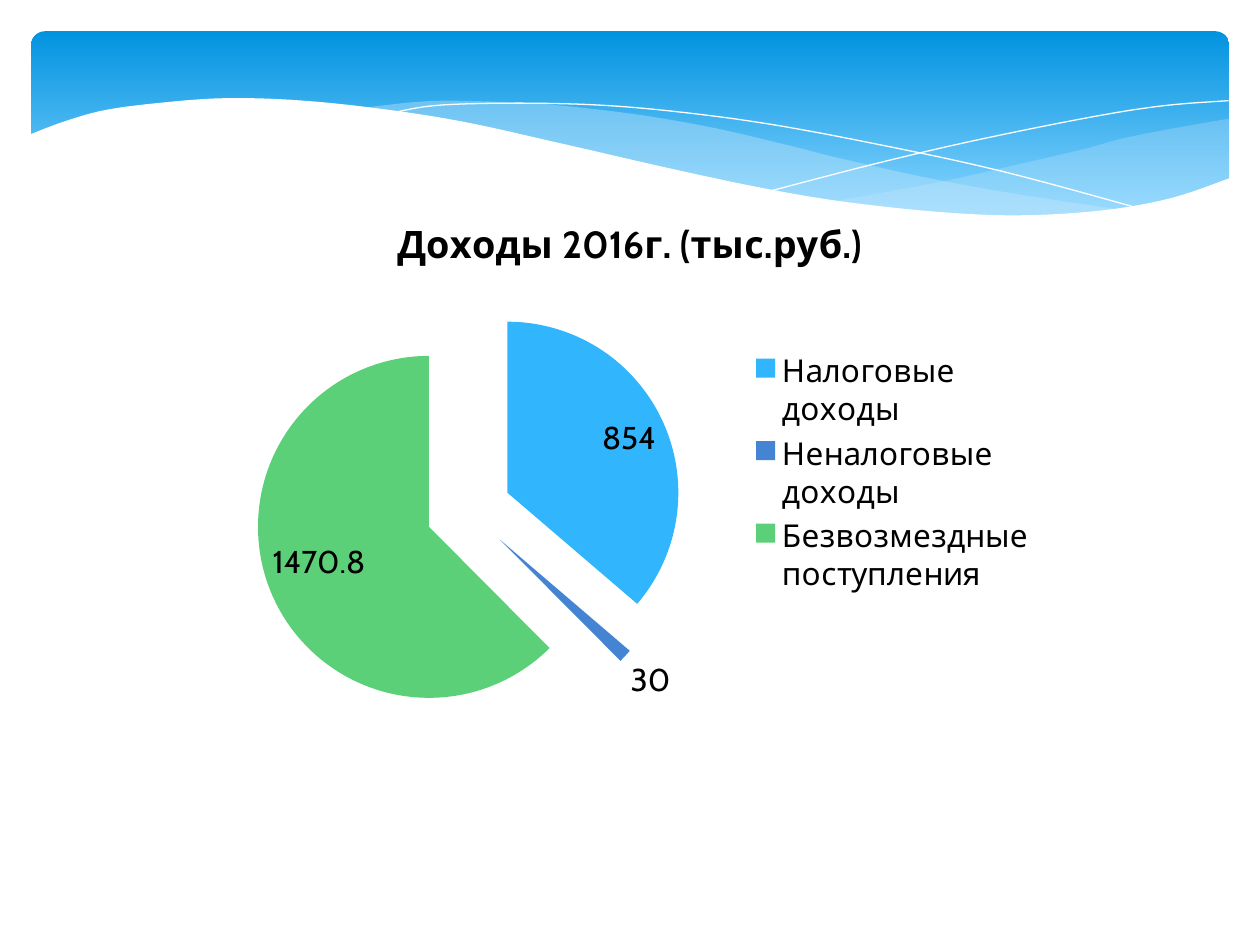
from dataclasses import dataclass
from typing import NamedTuple, Optional

from lxml.etree import Element
from pptx import Presentation
from pptx.chart.data import CategoryChartData
from pptx.dml.color import RGBColor as RGB
from pptx.enum.chart import XL_CHART_TYPE as ChartType
from pptx.enum.chart import XL_LABEL_POSITION as LabelPos
from pptx.enum.chart import XL_LEGEND_POSITION as LegendPos
from pptx.enum.shapes import MSO_SHAPE as Preset
from pptx.oxml.ns import qn
from pptx.util import Cm, Pt

Point = tuple[float, float]
Edge = list[Point]


@dataclass(frozen=True)
class Theme:
    font: str = "Cabin"
    text: str = "000000"
    white: str = "FFFFFF"
    wave: str = "C6E7FC"
    sky_top: str = "0293E0"
    sky_bottom: str = "83D3FE"
    body_pt: float = 18
    title_pt: float = 21.6


class Wave(NamedTuple):
    edges: list[Edge]
    fill: Optional[str] = None
    opacity: int = 100
    line: Optional[str] = None


class Income(NamedTuple):
    name: str
    value: float
    color: str


THEME = Theme()
TITLE = "Доходы 2016г. (тыс.руб.)"
EXPLOSION = 25
UNITS_PER_CM = 1000

INCOMES = [
    Income("Налоговые доходы", 854, "31B6FD"),
    Income("Неналоговые доходы", 30, "4584D3"),
    Income("Безвозмездные поступления", 1470.8, "5BD078"),
]

# Each edge is a curve through its points, in centimetres.
WAVES = [
    Wave([
        [(24.79, 2.39), (23.75, 2.57), (22.63, 2.79), (21.87, 3), (20.45, 3.33),
         (19.13, 3.63), (17.93, 3.86), (16.79, 4.06)],
        [(16.79, 4.06), (17.91, 4.19), (18.92, 4.29), (20.12, 4.37), (21.21, 4.37),
         (22.38, 4.24), (23.39, 4.06), (24.1, 3.86), (24.79, 3.58)],
    ], fill=THEME.wave, opacity=29),
    Wave([
        [(22.68, 4.24), (20.5, 3.91), (18.82, 3.61), (16.97, 3.2), (15.98, 2.95),
         (14.45, 2.59), (13.06, 2.34), (11.81, 2.18), (10.67, 2.08), (9.17, 2.03),
         (8.33, 2.06), (7.26, 2.18)],
        [(7.26, 2.18), (8.69, 2.39), (10.26, 2.69), (11.4, 2.95), (13.46, 3.43),
         (15.27, 3.81), (16.89, 4.09), (18.34, 4.27), (19.63, 4.37), (20.78, 4.39),
         (21.77, 4.34), (22.68, 4.24)],
    ], fill=THEME.wave, opacity=40),
    Wave([
        [(7.85, 2.29), (8.74, 2.13), (10.19, 2.08), (11.91, 2.11), (13.54, 2.24),
         (15.44, 2.49), (17.65, 2.9), (20.19, 3.45), (23.04, 4.22)],
    ], line=THEME.white),
    Wave([
        [(15.57, 3.84), (17.65, 3.3), (19.71, 2.82), (22, 2.36), (23.47, 2.13),
         (24.77, 2.03)],
    ], line=THEME.white),
    Wave([
        [(24.82, 3.58), (23.62, 3.99), (22.23, 4.24), (20.55, 4.34), (18.9, 4.27),
         (16.97, 4.06), (15.32, 3.78), (13.44, 3.38), (11.35, 2.9), (9.27, 2.44),
         (7.42, 2.16), (5.84, 2.01), (4.5, 1.98), (3.35, 2.06), (2.16, 2.21),
         (1.32, 2.44), (0.58, 2.72)],
        [(0.58, 5.69), (24.82, 5.69)],
    ], fill=THEME.white),
]


def smooth(edge: Edge, steps: int = 6) -> Edge:
    """Return points on a Catmull-Rom curve through the edge."""
    if len(edge) < 3:
        return edge
    padded = [edge[0], *edge, edge[-1]]
    curve = [edge[0]]
    for a, b, c, d in zip(padded, padded[1:], padded[2:], padded[3:]):
        for i in range(1, steps + 1):
            t = i / steps
            x, y = (
                q + t / 2 * (r - p + t * (2 * p - 5 * q + 4 * r - s
                                          + t * (3 * (q - r) + s - p)))
                for p, q, r, s in zip(a, b, c, d)
            )
            curve.append((x, y))
    return curve


def add_sky(shapes) -> None:
    sp = shapes.add_shape(Preset.ROUNDED_RECTANGLE, Cm(0.63), Cm(0.63), Cm(24.15), Cm(3.96))
    sp.adjustments[0] = 0.07
    sp.shadow.inherit = False
    sp.line.fill.background()
    sp.fill.gradient()
    sp.fill.gradient_angle = 270
    first, last = sp.fill.gradient_stops
    first.color.rgb, first.position = RGB.from_string(THEME.sky_top), 0
    last.color.rgb, last.position = RGB.from_string(THEME.sky_bottom), 0.9


def add_wave(shapes, wave: Wave) -> None:
    points = [(x * UNITS_PER_CM, y * UNITS_PER_CM)
              for edge in wave.edges for x, y in smooth(edge)]
    builder = shapes.build_freeform(*points[0], scale=Cm(1) / UNITS_PER_CM)
    builder.add_line_segments(points[1:], close=wave.fill is not None)
    sp = builder.convert_to_shape()
    sp.shadow.inherit = False
    if wave.fill:
        sp.fill.solid()
        sp.fill.fore_color.rgb = RGB.from_string(wave.fill)
        color = sp.fill._xPr.find(f".//{qn('a:srgbClr')}")
        if wave.opacity < 100:
            alpha = Element(qn("a:alpha"), val=str(wave.opacity * 1000))
            color.append(alpha)
    else:
        sp.fill.background()
    if wave.line:
        sp.line.color.rgb = RGB.from_string(wave.line)
        sp.line.width = Pt(0)
    else:
        sp.line.fill.background()


def style_font(font, size: float, bold: bool = False) -> None:
    font.name = THEME.font
    font.size = Pt(size)
    font.bold = bold
    font.color.rgb = RGB.from_string(THEME.text)


def add_income_pie(shapes) -> None:
    data = CategoryChartData()
    data.categories = [income.name for income in INCOMES]
    data.add_series(TITLE, [income.value for income in INCOMES])
    chart = shapes.add_chart(ChartType.PIE, Cm(4.23), Cm(3.89), Cm(16.93), Cm(11.29), data).chart
    style_font(chart.font, THEME.body_pt)

    chart.has_title = True
    r = chart.chart_title.text_frame.paragraphs[0].add_run()
    r.text = TITLE
    style_font(r.font, THEME.title_pt, bold=True)

    chart.has_legend = True
    chart.legend.position = LegendPos.RIGHT
    chart.legend.include_in_layout = False

    plot = chart.plots[0]
    plot.vary_by_categories = True
    series = plot.series[0]
    explosion = Element(qn("c:explosion"), val=str(EXPLOSION))
    series._element.find(qn("c:tx")).addnext(explosion)
    for i, income in enumerate(INCOMES):
        fill = series.points[i].format.fill
        fill.solid()
        fill.fore_color.rgb = RGB.from_string(income.color)
    labels = series.data_labels
    labels.show_value = True
    labels.position = LabelPos.BEST_FIT
    style_font(labels.font, THEME.body_pt)


def main() -> None:
    prs = Presentation()
    prs.slide_width, prs.slide_height = Cm(25.4), Cm(19.05)
    blank = prs.slide_layouts[6]
    shapes = prs.slides.add_slide(blank).shapes
    add_sky(shapes)
    for wave in WAVES:
        add_wave(shapes, wave)
    add_income_pie(shapes)
    prs.save("out.pptx")


if __name__ == "__main__":
    main()
